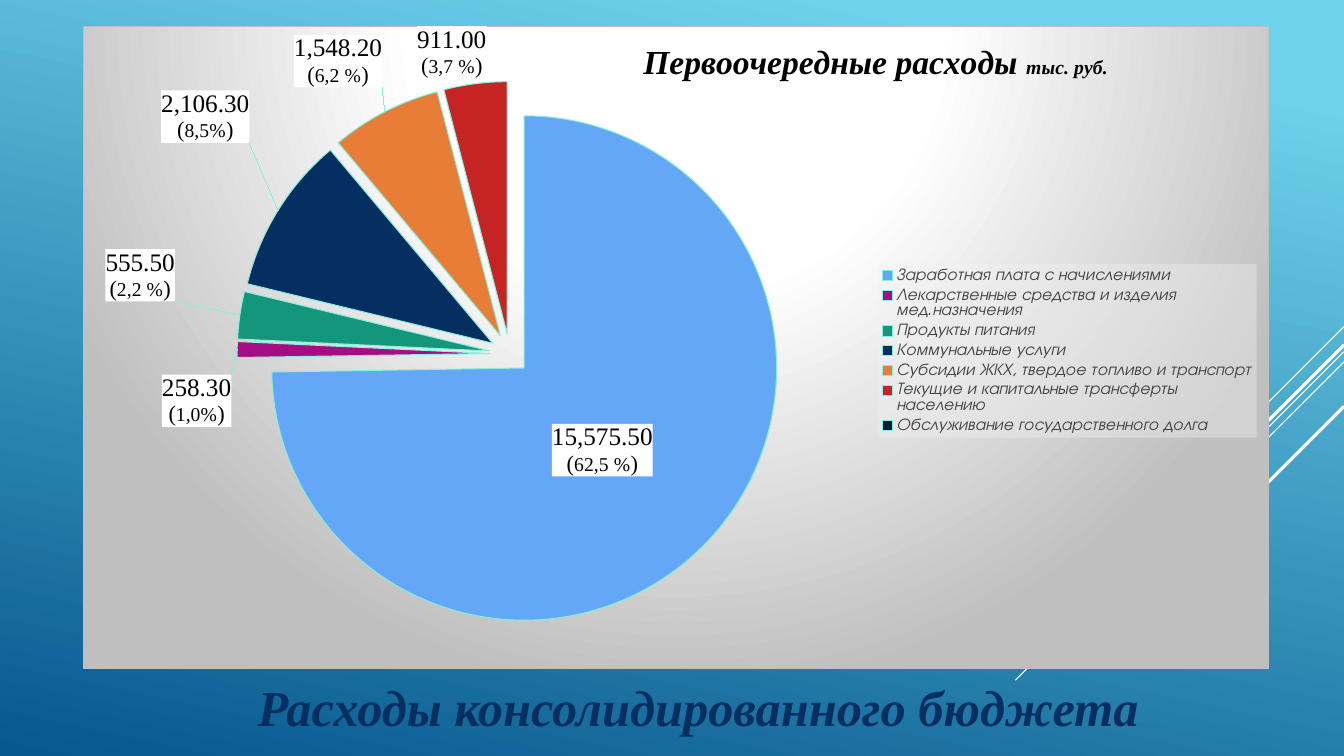
"""Build the slide on consolidated budget spending with its exploded pie chart."""
from dataclasses import dataclass

from lxml import etree
from pptx import Presentation
from pptx import util as u
from pptx.chart import data as chart_data
from pptx.dml import color
from pptx.enum import chart as ce, shapes, text
from pptx.oxml import ns, parse_xml

NAMESPACES = ns.nsdecls("a", "c")
SERIF = "Times New Roman"
SANS = "TeX Gyre Adventor"


@dataclass(frozen=True)
class Theme:
    sky: str = "6ED2EB"
    deep: str = "06588E"
    navy: str = "052F61"
    white: str = "FFFFFF"
    black: str = "000000"
    grey: str = "BFBFBF"
    legend_text: str = "404040"
    legend_fill: str = "F2F2F2"
    outline: str = "87EFDA"
    title_size: int = 36
    chart_title_size: int = 24
    unit_size: int = 14
    value_size: int = 18
    bracket_size: int = 16
    share_size: int = 14
    legend_size: int = 12
    chart_size: int = 10
    hairline: float = 0.75


THEME = Theme()


@dataclass(frozen=True)
class Stripe:
    top: float
    run: float
    weight: float


@dataclass(frozen=True)
class Label:
    value: str
    share: str
    shift: tuple[float, float]


@dataclass(frozen=True)
class Expense:
    name: str
    percent: int
    fill: str
    label: Label | None = None


STRIPES = [
    Stripe(8.23, 2.54, 0.75),
    Stripe(8.86, 8.28, 0.75),
    Stripe(9.12, 5.26, 0.75),
    Stripe(8.69, 4.85, 2.25),
    Stripe(10.24, 3.53, 2.25),
]
EXPENSES = [
    Expense("Заработная плата с начислениями", 74, "64A7F7", Label("15,575.50", "62,5 %", (-0.01, -0.01))),
    Expense("Лекарственные средства и изделия мед.назначения", 1, "A50E82", Label("258.30", "1,0%", (0, 0.08))),
    Expense("Продукты питания", 3, "14967C", Label("555.50", "2,2 %", (-0.05, -0.02))),
    Expense("Коммунальные услуги", 10, "052F61", Label("2,106.30", "8,5%", (-0.02, -0.1))),
    Expense("Субсидии ЖКХ, твердое топливо и транспорт", 7, "E87D37", Label("1,548.20", "6,2 %", (0, -0.03))),
    Expense("Текущие и капитальные трансферты населению", 4, "C62324", Label("911.00", "3,7 %", (0.01, 0))),
    Expense("Обслуживание государственного долга", 0, "031C3A"),
]


def rgb(value: str) -> color.RGBColor:
    return color.RGBColor.from_string(value)


def style(font, name: str, size: float, fill: str, bold: bool = False, italic: bool = False) -> None:
    font.name, font.size, font.bold, font.italic = name, u.Pt(size), bold, italic
    font.color.rgb = rgb(fill)


def add_run(paragraph, content: str, size: float, fill: str, emphasis: bool = False) -> None:
    run = paragraph.add_run()
    run.text = content
    style(run.font, SERIF, size, fill, emphasis, emphasis)


def chart_xml(markup: str):
    tag = markup.split(">")[0].split()[0].rstrip("/")
    return parse_xml(markup.replace(tag, f"{tag} {NAMESPACES}", 1))


def place(parent, position: int, x: float, y: float, size: tuple[float, float] | None = None,
          inner: bool = False, edge: bool = True) -> None:
    for layout in parent.findall(ns.qn("c:layout")):
        parent.remove(layout)
    parts = ['<c:layoutTarget val="inner"/>'] if inner else []
    if edge:
        parts.append('<c:xMode val="edge"/><c:yMode val="edge"/>')
    parts.append(f'<c:x val="{x}"/><c:y val="{y}"/>')
    if size:
        parts.append(f'<c:w val="{size[0]}"/><c:h val="{size[1]}"/>')
    parent.insert(position, chart_xml(
        f"<c:layout><c:manualLayout>{''.join(parts)}</c:manualLayout></c:layout>"))


def paint_background(slide) -> None:
    fill = slide.background.fill
    fill.gradient()
    fill.gradient_angle = 258
    for stop, position, shade in zip(fill.gradient_stops, (0.1, 1), (THEME.sky, THEME.deep)):
        stop.position = position
        stop.color.rgb = rgb(shade)


def add_stripe(slide, stripe: Stripe, right: float) -> None:
    connector = slide.shapes.add_connector(
        shapes.MSO_CONNECTOR.STRAIGHT, u.Cm(right), u.Cm(stripe.top),
        u.Cm(right - stripe.run), u.Cm(stripe.top + stripe.run))
    connector.line.color.rgb = rgb(THEME.white)
    connector.line.width = u.Pt(stripe.weight)
    etree.SubElement(connector._element.spPr, ns.qn("a:effectLst"))


def write_title(slide) -> None:
    title = slide.shapes.title
    title.left, title.top, title.width, title.height = u.Cm(1.9), u.Cm(16.89), u.Cm(31.39), u.Cm(1.83)
    title.text_frame.vertical_anchor = text.MSO_ANCHOR.MIDDLE
    paragraph = title.text_frame.paragraphs[0]
    paragraph.alignment = text.PP_ALIGN.CENTER
    add_run(paragraph, "Расходы консолидированного бюджета", THEME.title_size, THEME.navy, True)
    slide.shapes._spTree.append(title._element)


def add_label(point, label: Label, position) -> None:
    data_label = point.data_label
    frame = data_label.text_frame
    frame.word_wrap = False
    add_run(frame.paragraphs[0], label.value, THEME.value_size, THEME.black)
    share = frame.add_paragraph()
    for content, size in (("(", THEME.bracket_size), (label.share, THEME.share_size), (")", THEME.bracket_size)):
        add_run(share, content, size, THEME.black)
    data_label.position = position
    element = frame._txBody.getparent().getparent()
    element.find(ns.qn("c:tx")).addnext(chart_xml(
        f'<c:spPr><a:solidFill><a:srgbClr val="{THEME.white}"/></a:solidFill></c:spPr>'))
    place(element, 1, *label.shift, edge=False)


def format_series(series) -> None:
    series.format.line.color.rgb = rgb(THEME.outline)
    series.format.line.width = u.Pt(THEME.hairline)
    series._element.find(ns.qn("c:spPr")).addnext(chart_xml('<c:explosion val="8"/>'))
    series.data_labels.show_value = False
    for index, expense in enumerate(EXPENSES):
        point = series.points[index]
        point.format.fill.solid()
        point.format.fill.fore_color.rgb = rgb(expense.fill)
        point.format.line.color.rgb = rgb(THEME.outline)
        point.format.line.width = u.Pt(THEME.hairline)
        if expense.label:
            side = ce.XL_LABEL_POSITION.OUTSIDE_END if index else ce.XL_LABEL_POSITION.CENTER
            add_label(point, expense.label, side)


def format_chart_title(chart) -> None:
    chart.has_title = True
    paragraph = chart.chart_title.text_frame.paragraphs[0]
    add_run(paragraph, "Первоочередные расходы ", THEME.chart_title_size, THEME.black, True)
    add_run(paragraph, "тыс. руб.", THEME.unit_size, THEME.black, True)
    place(chart.chart_title._element, 1, 0.47, 0.02)


def format_legend(chart) -> None:
    chart.has_legend = True
    legend = chart.legend
    legend.position = ce.XL_LEGEND_POSITION.RIGHT
    legend.include_in_layout = False
    style(legend.font, SANS, THEME.legend_size, THEME.legend_text, italic=True)
    place(legend._element, 1, 0.67, 0.37, (0.32, 0.27))
    legend._element.find(ns.qn("c:overlay")).addnext(chart_xml(
        f'<c:spPr><a:solidFill><a:srgbClr val="{THEME.legend_fill}"><a:alpha val="39000"/>'
        '</a:srgbClr></a:solidFill></c:spPr>'))


def add_pie(slide) -> None:
    data = chart_data.CategoryChartData()
    data.categories = [expense.name for expense in EXPENSES]
    data.add_series("Series 1", [expense.percent for expense in EXPENSES])
    chart = slide.shapes.add_chart(
        ce.XL_CHART_TYPE.PIE, u.Cm(2.08), u.Cm(0.64), u.Cm(29.9), u.Cm(16.23), data).chart
    style(chart.font, SANS, THEME.chart_size, THEME.white)
    chart.plots[0].vary_by_categories = True
    format_chart_title(chart)
    format_legend(chart)
    format_series(chart.plots[0].series[0])
    body = chart._chartSpace.find(ns.qn("c:chart"))
    place(body.find(ns.qn("c:plotArea")), 0, 0.13, 0.05, (0.46, 0.92), inner=True)
    stops = "".join(f'<a:gs pos="{position}"><a:srgbClr val="{shade}"/></a:gs>' for position, shade in (
        (0, THEME.white), (39000, THEME.white), (100000, THEME.grey)))
    body.addnext(chart_xml(
        f'<c:spPr><a:gradFill><a:gsLst>{stops}</a:gsLst><a:path path="circle">'
        '<a:fillToRect l="50000" t="-80000" r="50000" b="180000"/></a:path></a:gradFill>'
        f'<a:ln w="{u.Pt(THEME.hairline)}"><a:solidFill><a:srgbClr val="{THEME.grey}"/></a:solidFill></a:ln></c:spPr>'))


def main() -> None:
    presentation = Presentation()
    width = 33.87
    presentation.slide_width, presentation.slide_height = u.Cm(width), u.Cm(19.05)
    slide = presentation.slides.add_slide(presentation.slide_layouts[5])
    paint_background(slide)
    for stripe in STRIPES:
        add_stripe(slide, stripe, width)
    write_title(slide)
    add_pie(slide)
    presentation.save("out.pptx")


if __name__ == "__main__":
    main()
